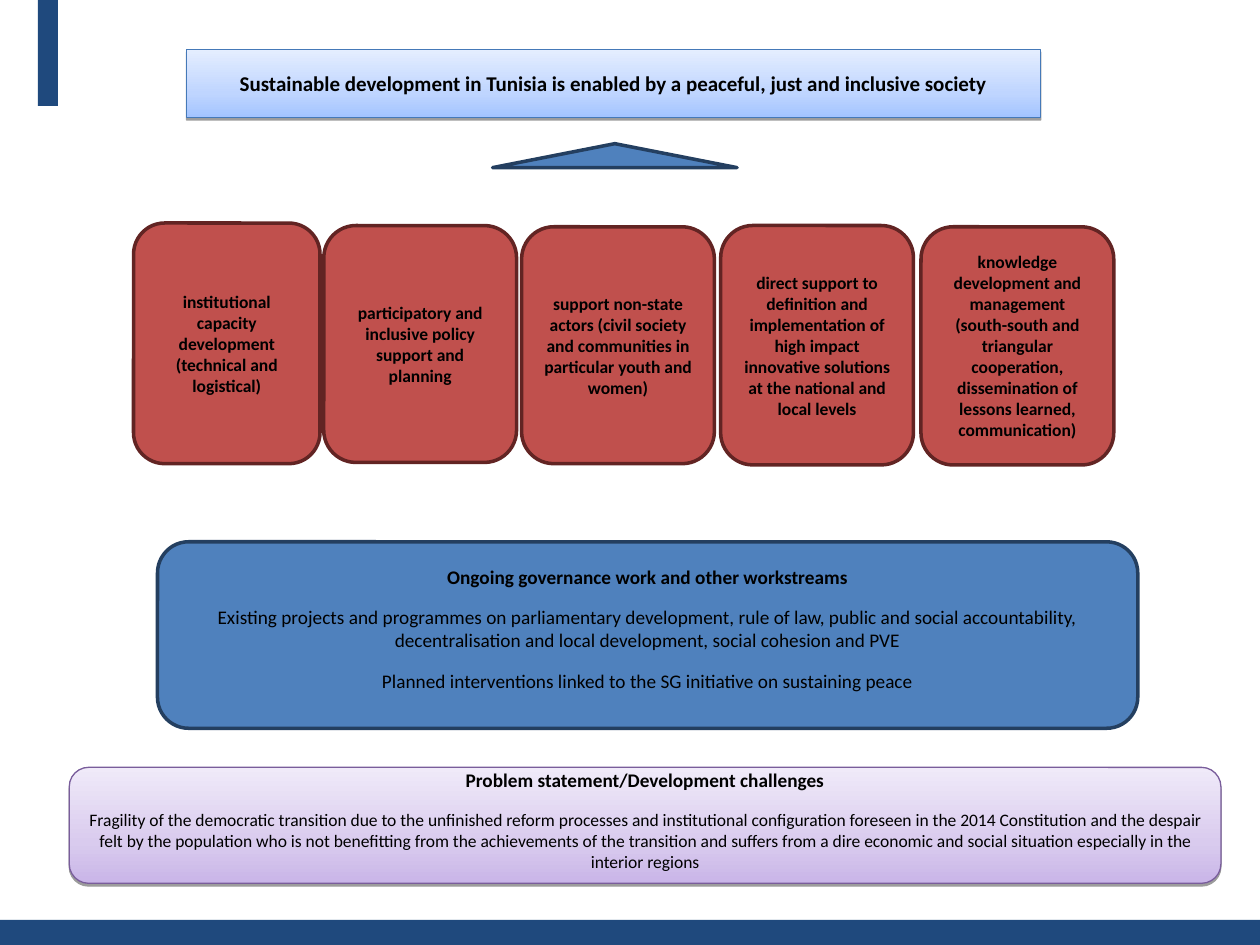
from copy import deepcopy

from lxml.etree import SubElement
from pptx import Presentation
from pptx.dml.color import RGBColor
from pptx.enum.shapes import MSO_SHAPE
from pptx.enum.text import MSO_ANCHOR, MSO_AUTO_SIZE, PP_ALIGN
from pptx.oxml.ns import qn
from pptx.util import Inches, Pt

COLORS = {
    "navy": "1F497D",
    "blue": "4F81BD",
    "blue_edge": "243F60",
    "red": "C0504D",
    "red_edge": "622423",
    "goal_edge": "4579B8",
    "problem_edge": "795D9B",
    "ink": "000000",
}
GRADIENTS = {
    "goal": ("A3C4FF", "BFD5FF", "E5EEFF"),
    "problem": ("C9B5E8", "D9CBEE", "F0EAF9"),
}
STOPS = (0, 0.35, 1)
COLUMNS, ROWS = 100, 75


class Board:
    font = "Calibri"
    gap = Pt(10)

    def __init__(self, deck):
        self.slide = deck.slides.add_slide(deck.slide_layouts[5])
        self.column = deck.slide_width / COLUMNS
        self.row = deck.slide_height / ROWS

    def area(self, left, top, width, height):
        return (round(left * self.column), round(top * self.row),
                round(width * self.column), round(height * self.row))

    def shape(self, kind, place, fill, edge=None):
        shape = self.slide.shapes.add_shape(kind, *self.area(*place))
        shape.shadow.inherit = False
        shape.fill.solid()
        shape.fill.fore_color.rgb = RGBColor.from_string(COLORS[fill])
        if edge:
            self.outline(shape, edge, 2)
        else:
            shape.line.fill.background()
        return shape

    def outline(self, shape, edge, width):
        shape.line.color.rgb = RGBColor.from_string(COLORS[edge])
        shape.line.width = Pt(width)

    def box(self, place, fill, edge, lines):
        shape = self.shape(MSO_SHAPE.ROUNDED_RECTANGLE, place, fill, edge)
        self.put_text(shape, lines)
        return shape

    def title(self, place, lines):
        title = self.slide.shapes.title
        title.left, title.top, title.width, title.height = self.area(*place)
        geometry = SubElement(title.element.spPr, qn("a:prstGeom"), prst="roundRect")
        SubElement(geometry, qn("a:avLst"))
        self.glow(title, "goal", "goal_edge")
        self.put_text(title, lines)

    def glow(self, shape, gradient, edge):
        shape.fill.gradient()
        shape.fill.gradient_angle = 90
        stop_list = shape.element.spPr.find(".//" + qn("a:gsLst"))
        stop_list.append(deepcopy(stop_list[-1]))
        for stop, position, color in zip(shape.fill.gradient_stops, STOPS,
                                         GRADIENTS[gradient]):
            stop.position = position
            stop.color.rgb = RGBColor.from_string(color)
        self.outline(shape, edge, 0.75)
        shape.shadow.inherit = False
        effects = shape.element.spPr.find(qn("a:effectLst"))
        shadow = SubElement(effects, qn("a:outerShdw"), blurRad="0", dist="20000",
                            dir="5400000", rotWithShape="0")
        tint = SubElement(shadow, qn("a:srgbClr"), val=COLORS["ink"])
        SubElement(tint, qn("a:alpha"), val="38000")

    def put_text(self, shape, lines):
        frame = shape.text_frame
        frame.word_wrap = True
        frame.auto_size = MSO_AUTO_SIZE.NONE
        frame.vertical_anchor = MSO_ANCHOR.MIDDLE
        frame.text = "\n".join(text for text, _, _ in lines)
        for paragraph, (_, size, bold) in zip(frame.paragraphs, lines):
            paragraph.alignment = PP_ALIGN.CENTER
            paragraph.space_before = Pt(0)
            paragraph.space_after = self.gap
            for run in paragraph.runs:
                run.font.name = self.font
                run.font.size = Pt(size)
                run.font.bold = bold
                run.font.color.rgb = RGBColor.from_string(COLORS["ink"])
        frame.paragraphs[-1].space_after = Pt(0)


PILLARS = [
    ((10.6, 17.7, 14.8, 19.1),
     "institutional capacity development (technical and logistical)"),
    ((25.7, 17.9, 15.3, 18.8),
     "participatory and inclusive policy support and planning"),
    ((41.4, 18, 15.3, 18.8),
     "support non-state actors (civil society and communities in particular "
     "youth and women)"),
    ((57.2, 17.9, 15.3, 19),
     "direct support to definition and implementation of high impact "
     "innovative solutions at the national and local levels"),
    ((73.1, 18, 15.3, 18.9),
     "knowledge development and management (south-south and triangular "
     "cooperation, dissemination of lessons learned, communication)"),
]
WORKSTREAMS = [
    ("Ongoing governance work and other workstreams", 11, True),
    ("Existing projects and programmes on parliamentary development, rule of law, "
     "public and social accountability, decentralisation and local development, "
     "social cohesion and PVE", 11, False),
    ("Planned interventions linked to the SG initiative on sustaining peace", 11, False),
]
PROBLEM = [
    ("Problem statement/Development challenges", 11, True),
    ("Fragility of the democratic transition due to the unfinished reform processes "
     "and institutional configuration foreseen in the 2014 Constitution and the "
     "despair felt by the population who is not benefitting from the achievements "
     "of the transition and suffers from a dire economic and social situation "
     "especially in the interior regions", 10, False),
]
GOAL = [("Sustainable development in Tunisia is enabled by a peaceful, just and "
         "inclusive society", 12, True)]


def main():
    deck = Presentation()
    deck.slide_width, deck.slide_height = Inches(10), Inches(7.5)
    board = Board(deck)

    board.shape(MSO_SHAPE.RECTANGLE, (0, 73, 100, 2), "navy")
    board.shape(MSO_SHAPE.RECTANGLE, (3, 0, 1.6, 8.4), "navy")

    board.title((14.8, 3.9, 67.8, 5.4), GOAL)
    board.shape(MSO_SHAPE.ISOSCELES_TRIANGLE, (39.1, 11.4, 19.4, 1.9),
                "blue", "blue_edge")

    for place, support in PILLARS:
        board.box(place, "red", "red_edge", [(support, 10, True)])

    workstreams = board.box((12.5, 43, 77.8, 14.8), "blue", "blue_edge", WORKSTREAMS)
    workstreams.text_frame.margin_bottom = Inches(0.15)

    problem = board.box((5.5, 60.9, 91.4, 9.2), "blue", "problem_edge", PROBLEM)
    board.glow(problem, "problem", "problem_edge")
    problem.text_frame.vertical_anchor = MSO_ANCHOR.TOP
    problem.text_frame.margin_top = Inches(-0.04)

    deck.save("out.pptx")


if __name__ == "__main__":
    main()
